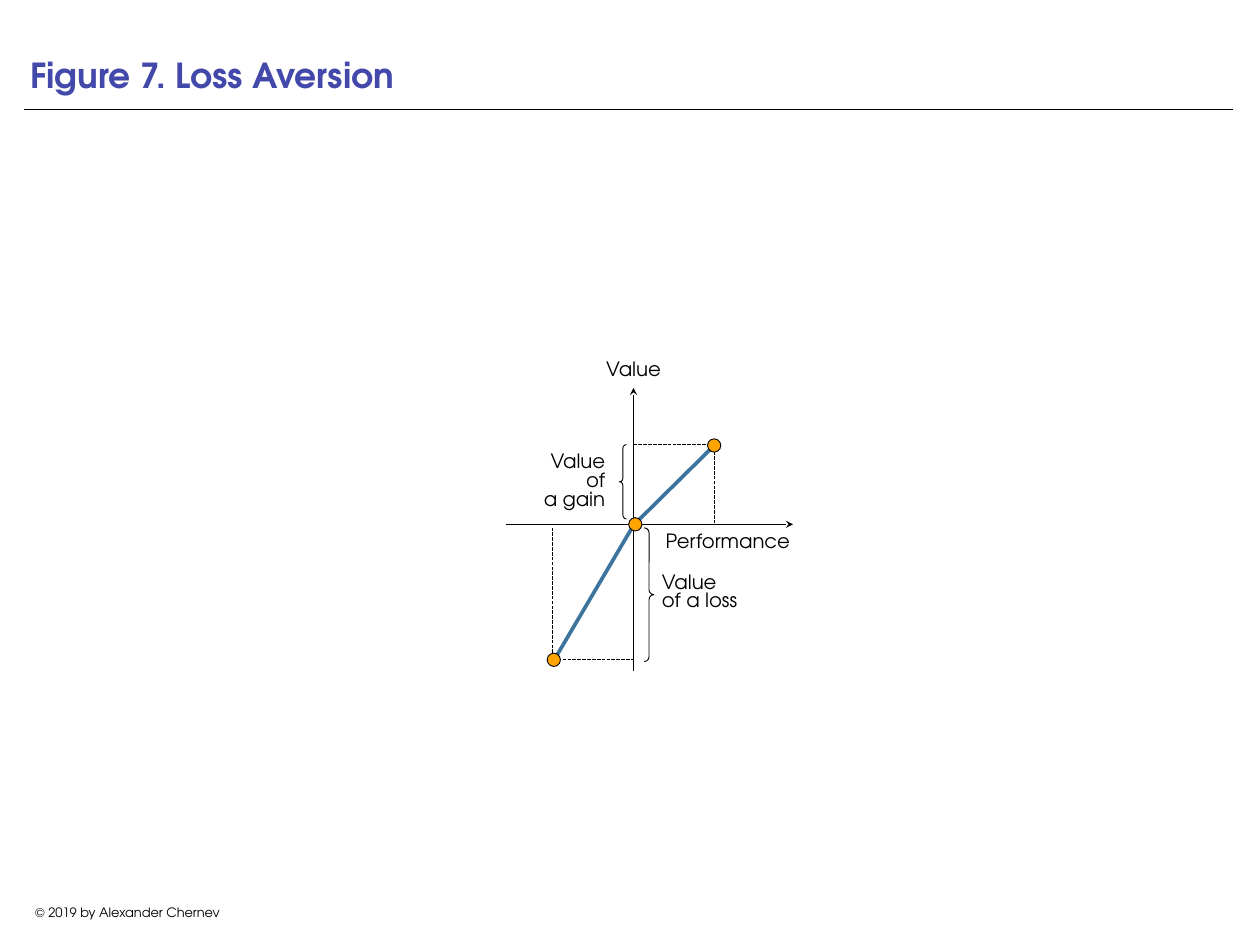
"""Build the loss aversion slide: a value curve with gain and loss brackets."""
from lxml.etree import SubElement
from pptx import Presentation
from pptx.dml.color import RGBColor
from pptx.enum.dml import MSO_LINE_DASH_STYLE as Dash
from pptx.enum.shapes import MSO_CONNECTOR as Connector, MSO_SHAPE as Shape
from pptx.enum.text import MSO_ANCHOR as Anchor, PP_ALIGN as Align
from pptx.oxml.ns import qn
from pptx.util import Inches, Pt

FONT = "TeX Gyre Adventor"
COLORS = {"ink": "000000", "title": "4349AA", "curve": "3D749D", "point": "FFA400"}

TITLE = "Figure 7. Loss Aversion"
FOOTER = "© 2019 by Alexander Chernev"
LABELS = [
    (["Value"], (6.77, 3.9, 0.76, 0.52), Align.CENTER),
    (["Value of", "a gain"], (5.88, 4.99, 1.01, 0.9), Align.RIGHT),
    (["Performance"], (7.41, 5.9, 1.61, 0.41), Align.CENTER),
    (["Value", "of a loss"], (7.41, 6.36, 1.01, 0.67), Align.LEFT),
]

RULE = (0.27, 1.24, 13.92, 1.24)
AXES = [(7.15, 7.58, 7.15, 4.38), (5.71, 5.92, 8.95, 5.92)]
CURVE = [(7.18, 5.9, 8.02, 5.07), (7.15, 5.93, 6.22, 7.51)]
GUIDES = [
    (7.15, 5.02, 8.05, 5.02),
    (8.06, 5.91, 8.06, 5.06),
    (6.24, 7.43, 6.24, 5.96),
    (6.24, 7.45, 7.14, 7.45),
]
BRACES = [
    (Shape.LEFT_BRACE, (6.99, 5.02, 0.08, 0.84)),
    (Shape.RIGHT_BRACE, (7.27, 5.96, 0.11, 1.51)),
]
POINTS = [(7.17, 5.92), (8.06, 5.03), (6.25, 7.45)]
DIAMETER = 0.15


def color(name):
    return RGBColor.from_string(COLORS[name])


def add_line(slide, ends, name="ink", width=1, dash=None, arrow=False):
    line = slide.shapes.add_connector(Connector.STRAIGHT, *map(Inches, ends))
    line.line.color.rgb = color(name)
    line.line.width = Pt(width)
    if dash:
        line.line.dash_style = dash
    properties = line._element.spPr
    if arrow:
        SubElement(properties.find(qn("a:ln")), qn("a:tailEnd"), type="stealth")
    SubElement(properties, qn("a:effectLst"))


def add_outline(slide, kind, place):
    shape = slide.shapes.add_shape(kind, *map(Inches, place))
    shape.shadow.inherit = False
    shape.line.color.rgb = color("ink")
    shape.line.width = Pt(0.75)
    return shape


def write(box, lines, align, inset, frame_format, font_format, spacing=None, name="ink"):
    frame = box.text_frame
    margins = dict.fromkeys(
        ("margin_left", "margin_top", "margin_right", "margin_bottom"), Inches(inset))
    for key, value in {**margins, **frame_format}.items():
        setattr(frame, key, value)
    frame.text = "\n".join(lines)
    for para in frame.paragraphs:
        para.alignment = align
        para.line_spacing = spacing
        span = para.runs[0]
        for key, value in {"name": FONT, **font_format}.items():
            setattr(span.font, key, value)
        span.font.color.rgb = color(name)


def add_texts(slide):
    title = slide.shapes.title
    place = {"left": 0.27, "top": 0, "width": 13.64, "height": 1.15}
    for key, value in place.items():
        setattr(title, key, Inches(value))
    write(title, [TITLE], Align.LEFT, 0.07,
          {"vertical_anchor": Anchor.BOTTOM, "word_wrap": True},
          {"size": Pt(28), "bold": True}, name="title")

    footer = slide.shapes.add_textbox(*map(Inches, (0.27, 10.16, 2.34, 0.28)))
    write(footer, [FOOTER], Align.CENTER, 0.05,
          {"word_wrap": False}, {"size": Pt(10.5)})

    for lines, place, align in LABELS:
        label = slide.shapes.add_textbox(*map(Inches, place))
        write(label, lines, align, 0.06,
              {"vertical_anchor": Anchor.MIDDLE, "word_wrap": True},
              {"size": Pt(16)}, spacing=0.8 if len(lines) > 1 else None)


def add_diagram(slide):
    add_line(slide, RULE, width=0.5)
    for ends in AXES:
        add_line(slide, ends, arrow=True)
    for ends in CURVE:
        add_line(slide, ends, name="curve", width=3)
    for ends in GUIDES:
        add_line(slide, ends, dash=Dash.SQUARE_DOT)
    for kind, place in BRACES:
        brace = add_outline(slide, kind, place)
        brace.fill.background()
        brace.adjustments[0] = 0.5
    for x, y in POINTS:
        place = (x - DIAMETER / 2, y - DIAMETER / 2, DIAMETER, DIAMETER)
        point = add_outline(slide, Shape.OVAL, place)
        point.fill.solid()
        point.fill.fore_color.rgb = color("point")


def main():
    deck = Presentation()
    deck.slide_width, deck.slide_height = Inches(14.22), Inches(10.67)
    page = deck.slides.add_slide(deck.slide_layouts[5])
    add_texts(page)
    add_diagram(page)
    deck.save("out.pptx")


if __name__ == "__main__":
    main()
